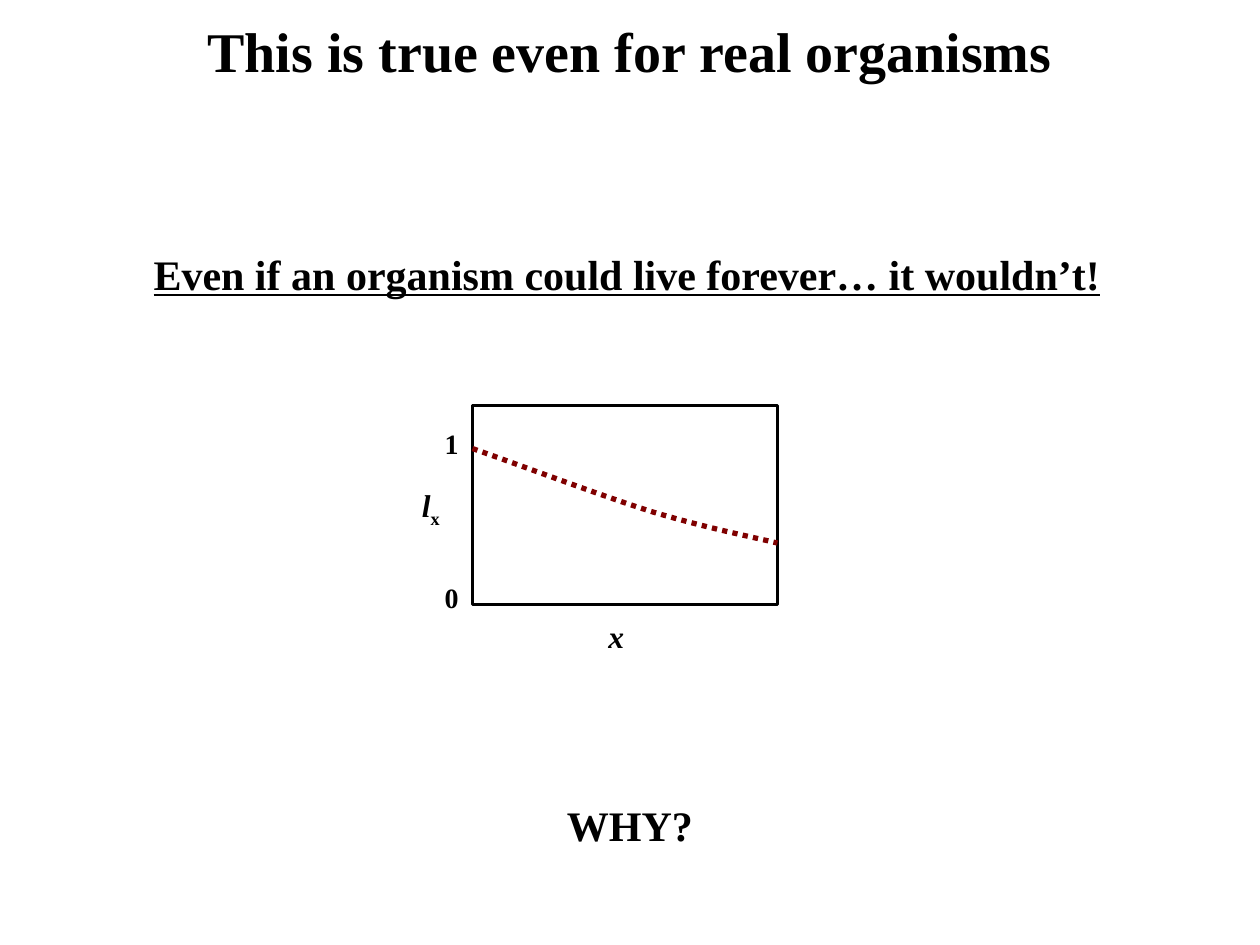
from pptx import Presentation
from pptx.dml.color import RGBColor
from pptx.enum.dml import MSO_LINE_DASH_STYLE as Dash
from pptx.enum.shapes import MSO_SHAPE as Shape
from pptx.enum.text import MSO_ANCHOR as Anchor, PP_ALIGN as Align
from pptx.util import Inches, Pt

FONT = "Times New Roman"
BLACK, DARK_RED = "000000", "800000"


def color(hex_value):
    return RGBColor.from_string(hex_value)


def place(shape, left, top, width, height):
    shape.left, shape.top = Inches(left), Inches(top)
    shape.width, shape.height = Inches(width), Inches(height)


def format_text(shape, text, size, align=Align.LEFT, wrap=False,
                italic=False, underline=False):
    frame = shape.text_frame
    frame.text = text
    frame.word_wrap = wrap
    frame.vertical_anchor = Anchor.TOP
    paragraph = frame.paragraphs[0]
    paragraph.alignment = align
    font = paragraph.runs[0].font
    font.name, font.size, font.bold = FONT, Pt(size), True
    font.italic, font.underline = italic, underline
    font.color.rgb = color(BLACK)
    return paragraph


def add_text(slide, box, text, size, **style):
    shape = slide.shapes.add_textbox(*map(Inches, box))
    return format_text(shape, text, size, **style)


def style_outline(shape, hex_value, width):
    shape.shadow.inherit = False
    shape.fill.background()
    shape.line.color.rgb = color(hex_value)
    shape.line.width = Pt(width)


def add_title(slide, box, text):
    title = slide.shapes.title
    place(title, *box)
    format_text(title, text, 32, align=Align.CENTER, wrap=True)


def bezier_points(start, control_1, control_2, end, steps=12):
    for step in range(1, steps + 1):
        t = step / steps
        weights = ((1 - t) ** 3, 3 * t * (1 - t) ** 2,
                   3 * t ** 2 * (1 - t), t ** 3)
        points = (start, control_1, control_2, end)
        yield tuple(sum(w * p[axis] for w, p in zip(weights, points))
                    for axis in (0, 1))


def add_survivorship_plot(slide, left, top, width, height):
    # Plot frame
    frame = slide.shapes.add_shape(
        Shape.RECTANGLE, *map(Inches, (left, top, width, height)))
    style_outline(frame, BLACK, 1.5)

    # Axis names
    axis_name = add_text(slide, (left - 0.5, top + 0.59, 0.35, 0.4), "l", 18,
                         italic=True)
    subscript = axis_name.add_run()
    subscript.text = "x"
    font = subscript.font
    font.name, font.size, font.bold, font.italic = FONT, Pt(18), True, False
    font.color.rgb = color(BLACK)
    subscript._r.get_or_add_rPr().set("baseline", "-25000")
    add_text(slide, (left + 0.98, top + height + 0.05, 0.33, 0.4), "x", 18,
             italic=True)

    # Scale labels
    for label, offset in (("1", 0.12), ("0", 1.34)):
        add_text(slide, (left - 0.32, top + offset, 0.31, 0.37), label, 16)

    # Survivorship curve: two Bezier pieces, relative to the frame
    start, middle, end = (0, 0.34), (1.42, 0.84), (width, 1.09)
    points = [*bezier_points(start, (0.51, 0.52), (1.01, 0.71), middle),
              *bezier_points(middle, (1.82, 0.96), (2.12, 1.02), end)]
    builder = slide.shapes.build_freeform(
        Inches(left + start[0]), Inches(top + start[1]))
    builder.add_line_segments(
        [(Inches(left + x), Inches(top + y)) for x, y in points], close=False)
    curve = builder.convert_to_shape()
    style_outline(curve, DARK_RED, 3)
    curve.line.dash_style = Dash.ROUND_DOT  # written as sysDot


def main():
    presentation = Presentation()
    presentation.slide_width = Inches(10)
    presentation.slide_height = Inches(7.5)
    title_only = presentation.slide_layouts[5]
    slide = presentation.slides.add_slide(title_only)

    add_title(slide, (0, 0.08, 10, 0.63),
              "This is true even for real organisms")
    add_text(slide, (1.12, 1.92, 7.72, 0.83),
             "Even if an organism could live forever… it wouldn’t!", 24,
             underline=True)
    add_survivorship_plot(slide, 3.75, 3.22, 2.42, 1.58)
    add_text(slide, (0, 6.3, 10, 0.5), "WHY?", 24, align=Align.CENTER,
             wrap=True)

    presentation.save("out.pptx")


if __name__ == "__main__":
    main()
